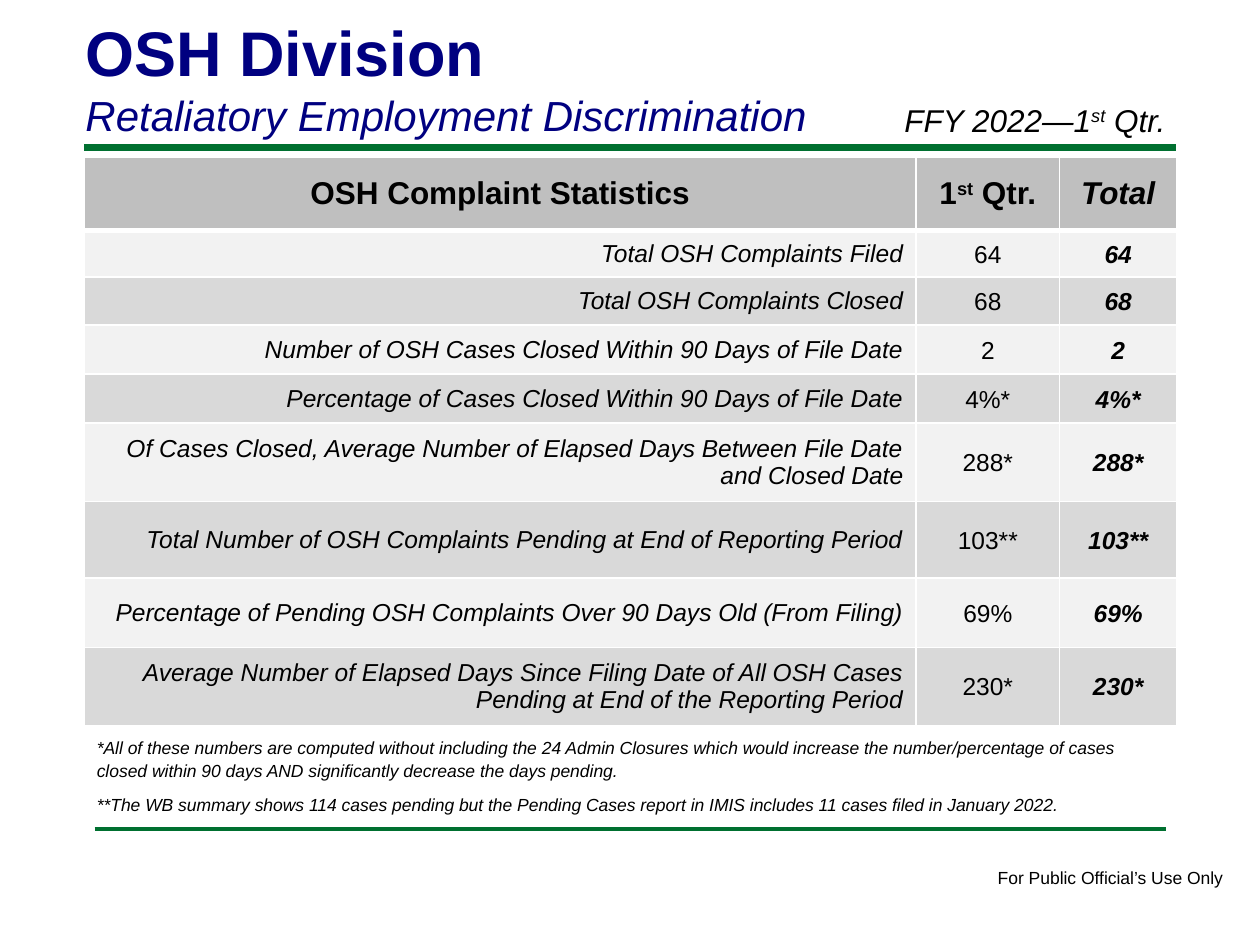
from lxml.etree import SubElement
from pptx import Presentation
from pptx.dml.color import RGBColor
from pptx.enum.shapes import MSO_CONNECTOR as Connector
from pptx.enum.text import MSO_ANCHOR as Anchor, MSO_AUTO_SIZE as AutoSize, PP_ALIGN as Align
from pptx.oxml.ns import qn
from pptx.util import Inches, Pt

GREEN, NAVY, BLACK, WHITE = "007030", "000080", "000000", "FFFFFF"
HEADER_GRAY, LIGHT_GRAY, MID_GRAY = "BFBFBF", "F2F2F2", "D9D9D9"
COLUMN_WIDTHS = [6.6, 1.14, 0.93]
ROW_HEIGHTS = [0.58, 0.37, 0.38, 0.39, 0.39, 0.62, 0.61, 0.55, 0.62]
HEADINGS = ["OSH Complaint Statistics", ["1", "st", " Qtr."], "Total"]
STATISTICS = [
    ("Total OSH Complaints Filed", "64"),
    ("Total OSH Complaints Closed", "68"),
    ("Number of OSH Cases Closed Within 90 Days of File Date", "2"),
    ("Percentage of Cases Closed Within 90 Days of File Date", "4%*"),
    ("Of Cases Closed, Average Number of Elapsed Days Between File Date and Closed Date", "288*"),
    ("Total Number of OSH Complaints Pending at End of Reporting Period", "103**"),
    ("Percentage of Pending OSH Complaints Over 90 Days Old (From Filing)", "69%"),
    ("Average Number of Elapsed Days Since Filing Date of All OSH Cases "
     "Pending at End of the Reporting Period", "230*"),
]
ADMIN_NOTE = ("*All of these numbers are computed without including the 24 Admin Closures which would "
              "increase the number/percentage of cases closed within 90 days AND significantly "
              "decrease the days pending.")
PENDING_NOTE = ("**The WB summary shows 114 cases pending but the Pending Cases report in IMIS "
                "includes 11 cases filed in January 2022.")


def rgb(value):
    """Turn a hex string into a colour."""
    return RGBColor.from_string(value)


def write(paragraph, text, size, color=BLACK, bold=False, italic=False, align=Align.LEFT):
    """Fill a paragraph; the second piece of a list is raised as superscript."""
    paragraph.alignment = align
    font = paragraph.font
    font.name, font.size, font.bold, font.italic = "Arial", Pt(size), bold, italic
    font.color.rgb = rgb(color)
    for position, piece in enumerate([text] if isinstance(text, str) else text):
        run = paragraph.add_run()
        run.text = piece
        if position == 1:
            run.font._element.set("baseline", "30000")


def space_out(paragraph):
    """Apply the looser spacing shared by values and footnotes."""
    paragraph.line_spacing = 1.07
    paragraph.space_after = Pt(8)


def add_text(slide, left, top, width, height, wrap=True):
    """Add a text box and return its frame."""
    box = slide.shapes.add_textbox(Inches(left), Inches(top), Inches(width), Inches(height))
    frame = box.text_frame
    frame.word_wrap = wrap
    frame.auto_size = AutoSize.SHAPE_TO_FIT_TEXT
    return frame


def add_rule(slide, left, right, y, weight):
    """Draw a green horizontal rule."""
    rule = slide.shapes.add_connector(
        Connector.STRAIGHT, Inches(left), Inches(y), Inches(right), Inches(y))
    rule.line.color.rgb = rgb(GREEN)
    rule.line.width = Pt(weight)
    SubElement(rule._element.spPr, qn("a:effectLst"))


def add_footnote(slide, text, top, width, height, wrap):
    """Add an indented footnote under the table."""
    note = add_text(slide, 0.17, top, width, height, wrap).paragraphs[0]
    note._p.get_or_add_pPr().set("marL", str(Inches(0.5)))
    space_out(note)
    write(note, text, 10, italic=True)


def style_cell(cell, fill, top=1, bottom=1):
    """Give a cell white borders, a fill and middle anchoring."""
    cell.vertical_anchor = Anchor.MIDDLE
    properties = cell._tc.get_or_add_tcPr()
    for side, weight in zip("LRTB", (1, 1, top, bottom)):
        border = SubElement(properties, qn(f"a:ln{side}"), w=str(Pt(weight)))
        SubElement(SubElement(border, qn("a:solidFill")), qn("a:srgbClr"), val=WHITE)
    cell.fill.solid()
    cell.fill.fore_color.rgb = rgb(fill)


def add_statistics(slide):
    """Build the complaint statistics table."""
    table = slide.shapes.add_table(
        len(ROW_HEIGHTS), len(COLUMN_WIDTHS), Inches(0.67), Inches(1.25),
        Inches(sum(COLUMN_WIDTHS)), Inches(sum(ROW_HEIGHTS))).table
    for column, width in zip(table.columns, COLUMN_WIDTHS):
        column.width = Inches(width)
    for row, height in zip(table.rows, ROW_HEIGHTS):
        row.height = Inches(height)
    for index, heading in enumerate(HEADINGS):
        cell = table.cell(0, index)
        style_cell(cell, HEADER_GRAY, bottom=3)
        write(cell.text_frame.paragraphs[0], heading, 18, bold=True,
              italic=heading == "Total", align=Align.CENTER)
    for number, (label, value) in enumerate(STATISTICS, 1):
        for index, text in enumerate((label, value, value)):
            cell = table.cell(number, index)
            style_cell(cell, LIGHT_GRAY if number % 2 else MID_GRAY, top=3 if number == 1 else 1)
            entry = cell.text_frame.paragraphs[0]
            if index:
                space_out(entry)
            write(entry, text, 14, bold=index == 2, italic=index != 1,
                  align=Align.CENTER if index else Align.RIGHT)


def main():
    """Build and save the slide."""
    deck = Presentation()
    deck.slide_width, deck.slide_height = Inches(10), Inches(7.5)
    slide = deck.slides.add_slide(deck.slide_layouts[6])
    add_rule(slide, 0.67, 9.33, 1.17, 4)
    add_rule(slide, 0.75, 9.25, 6.58, 2)
    notice = add_text(slide, 7.82, 6.83, 2.01, 0.27, wrap=False)
    write(notice.paragraphs[0], "For Public Official’s Use Only", 10)
    add_statistics(slide)
    period = add_text(slide, 7.08, 0.75, 2.5, 0.4)
    write(period.paragraphs[0], ["FFY 2022—1", "st", " Qtr."], 18, italic=True)
    title = add_text(slide, 0.58, 0.06, 8.25, 1.11)
    write(title.paragraphs[0], "OSH Division", 36, NAVY, bold=True)
    write(title.add_paragraph(), "Retaliatory Employment Discrimination", 24, NAVY, italic=True)
    add_footnote(slide, ADMIN_NOTE, 5.79, 9.17, 0.45, True)
    add_footnote(slide, PENDING_NOTE, 6.24, 8.41, 0.27, False)
    deck.save("out.pptx")


if __name__ == "__main__":
    main()
